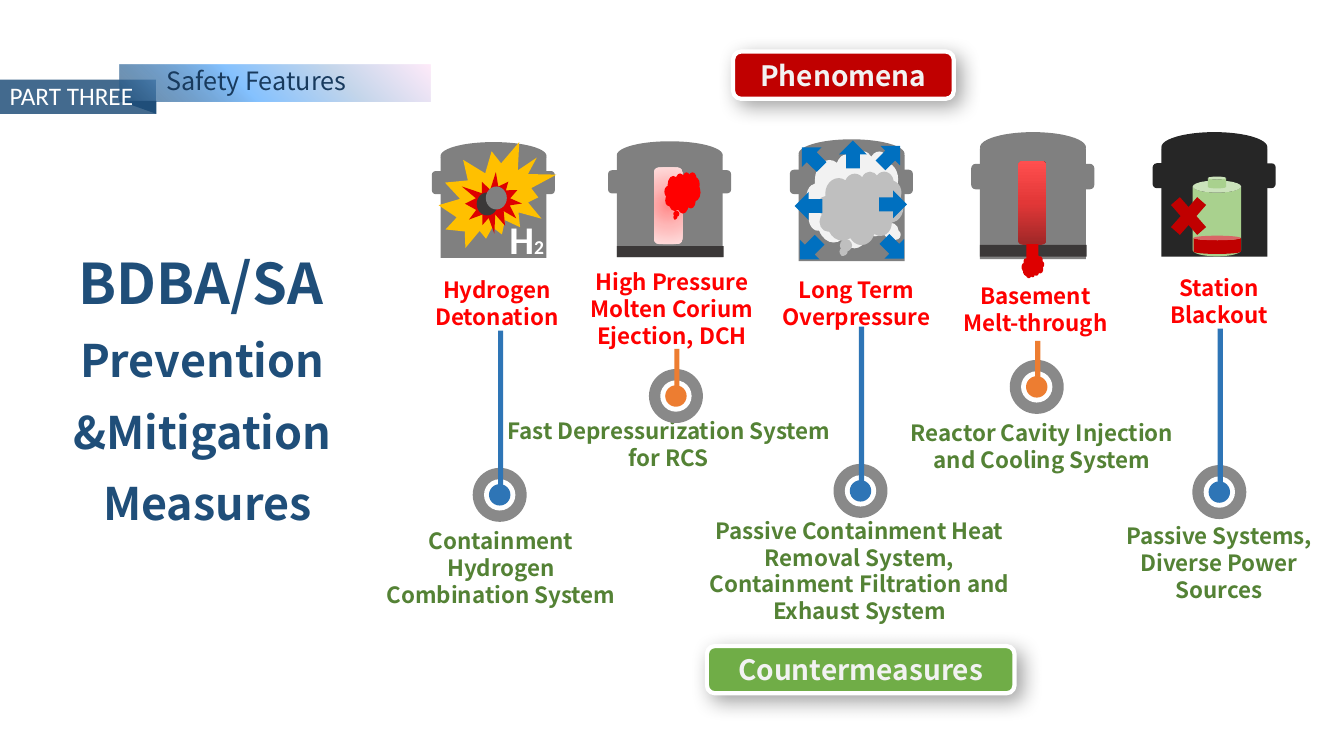
from dataclasses import dataclass

from lxml import etree
from pptx import Presentation
from pptx.dml.color import RGBColor
from pptx.enum.shapes import MSO_SHAPE
from pptx.enum.text import MSO_ANCHOR, MSO_AUTO_SIZE, PP_ALIGN
from pptx.oxml.ns import qn
from pptx.util import Cm, Pt

RECTANGLE = MSO_SHAPE.RECTANGLE
ROUNDED = MSO_SHAPE.ROUNDED_RECTANGLE
OVAL = MSO_SHAPE.OVAL
BURST_SMALL = MSO_SHAPE.EXPLOSION1
BURST_LARGE = MSO_SHAPE.EXPLOSION2
CLOUD = MSO_SHAPE.CLOUD_CALLOUT
ARROW = MSO_SHAPE.RIGHT_ARROW
CAN = MSO_SHAPE.CAN
CROSS = MSO_SHAPE.MATH_MULTIPLY
TOP, MIDDLE = MSO_ANCHOR.TOP, MSO_ANCHOR.MIDDLE
LEFT, CENTER = PP_ALIGN.LEFT, PP_ALIGN.CENTER
GROW, FIXED = MSO_AUTO_SIZE.SHAPE_TO_FIT_TEXT, MSO_AUTO_SIZE.NONE


@dataclass(frozen=True)
class Theme:
    font: str = "Noto Sans CJK SC"
    number_font: str = "Calibri"
    navy: str = "1F4E79"
    heading: str = "183A5D"
    white: str = "FFFFFF"
    off_white: str = "F2F2F2"
    gray: str = "808080"
    ring: str = "898989"
    steam: str = "BFBFBF"
    dark: str = "3B3838"
    black: str = "262626"
    red: str = "FF0000"
    corium: str = "DE0000"
    deep_red: str = "C00000"
    amber: str = "FFC000"
    arrow: str = "0070C0"
    blue: str = "2E75B6"
    orange: str = "ED7D31"
    green: str = "70AD47"
    cell: str = "A9D18E"
    measure: str = "548235"
    title_large: int = 40
    title: int = 32
    chemical: int = 28
    badge: int = 20
    section: int = 18
    label: int = 16
    subscript: int = 14


THEME = Theme()

# Label boxes: text, left, top, width, height
PHENOMENA = [
    ("Hydrogen Detonation", 10.49, 6.83, 4.06, 1.63),
    ("High Pressure Molten Corium Ejection, DCH", 14.53, 6.63, 4.8, 2.31),
    ("Long Term Overpressure", 19.25, 6.83, 4.65, 1.63),
    ("Basement Melt-through", 23.9, 6.99, 4.37, 1.63),
    ("Station Blackout", 29.01, 6.78, 3.4, 1.63),
]
COUNTERMEASURES = [
    ("Containment Hydrogen Combination System", 9.35, 13.16, 6.55, 2.31),
    ("Fast Depressurization System for RCS", 12.5, 10.39, 8.71, 1.63),
    ("Passive Containment Heat Removal System, Containment Filtration and Exhaust System",
     17.25, 12.9, 8.81, 3),
    ("Reactor Cavity Injection and Cooling System", 22.28, 10.44, 7.95, 1.63),
    ("Passive Systems, Diverse Power Sources", 27.58, 13.03, 6.27, 2.31),
]
# Pins: centre x, centre y, top of the stem, colour
PINS = [
    (12.59, 12.47, 8.33, THEME.blue),
    (30.72, 12.4, 8.28, THEME.blue),
    (17.03, 9.98, 8.79, THEME.orange),
    (26.12, 9.75, 8.59, THEME.orange),
    (21.68, 12.37, 8.23, THEME.blue),
]
# Pressure arrows: centre x, centre y, rotation
PRESSURE_ARROWS = [
    (21.49, 3.89, 270), (22.5, 5.15, 0), (22.53, 6.27, 45), (20.37, 5.19, 180),
    (20.4, 6.29, 135), (22.43, 3.92, 315), (20.45, 3.96, 225),
]


def paint(shape, colour):
    shape.shadow.inherit = False
    shape.fill.solid()
    shape.fill.fore_color.rgb = RGBColor.from_string(colour)
    shape.line.fill.background()


def add_figure(shapes, kind, left, top, width, height, colour, rotation=0):
    shape = shapes.add_shape(kind, Cm(left), Cm(top), Cm(width), Cm(height))
    paint(shape, colour)
    shape.rotation = rotation
    return shape


def add_colour(parent, colour, opacity=100):
    element = etree.SubElement(parent, qn("a:srgbClr"), val=colour)
    if opacity < 100:
        etree.SubElement(element, qn("a:alpha"), val=str(opacity * 1000))


def set_gradient(shape, stops, centre=None, angle=0):
    """Stops are (percent, colour, opacity); centre is l, t, r, b in percent."""
    shape.fill.gradient()
    gradient = shape._element.spPr.find(qn("a:gradFill"))
    for child in list(gradient):
        gradient.remove(child)
    stop_list = etree.SubElement(gradient, qn("a:gsLst"))
    for percent, colour, opacity in stops:
        stop = etree.SubElement(stop_list, qn("a:gs"), pos=str(percent * 1000))
        add_colour(stop, colour, opacity)
    if centre:
        route = etree.SubElement(gradient, qn("a:path"), {"path": "circle"})
        sides = {side: str(value * 1000) for side, value in zip("ltrb", centre)}
        etree.SubElement(route, qn("a:fillToRect"), sides)
    else:
        etree.SubElement(gradient, qn("a:lin"), ang=str(angle * 60000), scaled="0")


def add_run(paragraph, text, size, colour, bold=True, font=THEME.font):
    run = paragraph.add_run()
    run.text = text
    run.font.name = font
    run.font.size = Pt(size)
    run.font.bold = bold
    run.font.color.rgb = RGBColor.from_string(colour)


def add_text(shapes, box, runs, align=CENTER, wrap=True):
    frame = shapes.add_textbox(*map(Cm, box)).text_frame
    frame.word_wrap = wrap
    frame.auto_size = GROW
    paragraph = frame.paragraphs[0]
    paragraph.alignment = align
    for run in runs:
        add_run(paragraph, *run)


def add_badge(shapes, text, left, top, width, colour):
    badge = add_figure(shapes, ROUNDED, left, top, width, 1.19, colour)
    badge.line.color.rgb = RGBColor.from_string(THEME.white)
    badge.line.width = Pt(3)
    effects = badge._element.spPr.find(qn("a:effectLst"))
    shadow = etree.SubElement(effects, qn("a:outerShdw"), blurRad=str(Pt(15)),
                              dist=str(Pt(6.2)), dir="2700000", algn="tl", rotWithShape="0")
    add_colour(shadow, "000000", 36)
    badge.text_frame.vertical_anchor = MIDDLE
    paragraph = badge.text_frame.paragraphs[0]
    paragraph.alignment = CENTER
    add_run(paragraph, text, THEME.badge, THEME.off_white)


def add_containment(slide, left, top, height, colour=THEME.gray):
    shapes = slide.shapes.add_group_shape().shapes
    add_figure(shapes, RECTANGLE, left, top + 0.13 * height, 2.67, 0.87 * height, colour)
    add_figure(shapes, OVAL, left, top, 2.67, 0.24 * height, colour)
    add_figure(shapes, ROUNDED, left - 0.22, top + 0.25 * height, 3.1, 0.2 * height, colour)
    return shapes


def add_pin(slide, x, y, stem_top, colour):
    shapes = slide.shapes.add_group_shape().shapes
    for size, fill in ((1.36, THEME.ring), (0.79, THEME.white), (0.54, colour)):
        add_figure(shapes, OVAL, x - size / 2, y - size / 2, size, size, fill)
    add_figure(shapes, RECTANGLE, x - 0.04, stem_top, 0.13, y - stem_top, colour)


def add_title(slide):
    title = slide.shapes.title
    title.left, title.top, title.width, title.height = map(Cm, (1.02, 5.79, 8.41, 7.85))
    frame = title.text_frame
    frame.word_wrap, frame.auto_size, frame.vertical_anchor = True, FIXED, TOP
    for index, text in enumerate(("BDBA/SA ", "Prevention ", "&Mitigation ", "Measures")):
        paragraph = frame.add_paragraph() if index else frame.paragraphs[0]
        paragraph.alignment = CENTER
        paragraph.line_spacing = 1.2
        paragraph.space_before = Pt(5 if index else 0)
        add_run(paragraph, text, THEME.title if index else THEME.title_large, THEME.navy)


def add_section_ribbon(slide):
    shapes = slide.shapes
    band = add_figure(shapes, RECTANGLE, -0.03, 2.01, 3.96, 0.86, THEME.navy)
    colour = band._element.spPr.find(qn("a:solidFill"))[0]
    etree.SubElement(colour, qn("a:alpha"), val="84000")
    ribbon = add_figure(shapes, RECTANGLE, 3.02, 1.63, 7.82, 0.94, THEME.navy)
    set_gradient(ribbon, [(0, THEME.navy, 63), (40, "85C2FF", 100), (70, "C4D6EB", 100),
                          (100, "FFEBFA", 100)], centre=(0, 100, 100, 0))
    fold = shapes.build_freeform(Cm(3.94), Cm(2.54))
    fold.add_line_segments([(Cm(3.02), Cm(2.54)), (Cm(3.94), Cm(2.87))], close=True)
    paint(fold.convert_to_shape(), THEME.navy)
    add_text(shapes, (3.94, 1.52, 10.13, 1.02),
             [("Safety Features", THEME.section, THEME.heading, False)], LEFT)
    add_text(shapes, (-0.03, 1.9, 3.66, 1.02),
             [("PART THREE", THEME.section, THEME.white, False, THEME.number_font)], wrap=False)


def add_icons(slide):
    # Hydrogen detonation
    shapes = add_containment(slide, 11.1, 3.58, 2.92)
    add_figure(shapes, BURST_LARGE, 11.05, 3.58, 2.97, 2.67, THEME.amber)
    add_figure(shapes, BURST_SMALL, 11.73, 4.37, 1.4, 1.5, THEME.corium, 346.8)
    add_figure(shapes, OVAL, 12.01, 4.85, 0.53, 0.58, THEME.dark)
    add_figure(shapes, OVAL, 12.24, 4.7, 0.53, 0.58, THEME.gray)
    add_text(shapes, (12.57, 5.31, 1.4, 1.45),
             [("H", THEME.chemical, THEME.white, True, THEME.number_font),
              ("2", THEME.subscript, THEME.white, True, THEME.number_font)], wrap=False)
    # High pressure ejection
    shapes = add_containment(slide, 15.54, 3.56, 2.92)
    vessel = add_figure(shapes, ROUNDED, 16.48, 4.22, 0.71, 1.93, THEME.red)
    set_gradient(vessel, [(0, "FF8A8A", 100), (50, "FEB8B8", 100), (100, "FEDDDD", 100)],
                 centre=(50, 50, 50, 50))
    add_figure(shapes, CLOUD, 16.74, 4.34, 0.91, 1.04, THEME.red)
    add_figure(shapes, RECTANGLE, 15.54, 6.2, 2.69, 0.28, THEME.dark)
    # Basement melt-through
    shapes = add_containment(slide, 24.69, 3.33, 3.2)
    add_figure(shapes, RECTANGLE, 24.69, 6.17, 2.69, 0.3, THEME.dark)
    vessel = add_figure(shapes, ROUNDED, 25.65, 4.06, 0.71, 2.11, THEME.red)
    set_gradient(vessel, [(0, "9F2727", 100), (50, "E23737", 100), (100, "FF4F4F", 100)], angle=270)
    add_figure(shapes, CLOUD, 25.73, 6.4, 0.58, 0.58, THEME.corium, 166.7)
    add_figure(shapes, RECTANGLE, 25.86, 6.15, 0.3, 0.43, THEME.corium)
    # Long term overpressure
    shapes = add_containment(slide, 20.12, 3.51, 3.07)
    cloud = add_figure(shapes, CLOUD, 20.32, 3.81, 2.36, 2.44, THEME.off_white)
    cloud.adjustments[0], cloud.adjustments[1] = 0.46, 0.37
    add_figure(shapes, CLOUD, 20.6, 4.32, 2.16, 1.85, THEME.steam)
    for x, y, rotation in PRESSURE_ARROWS:
        add_figure(shapes, ARROW, x - 0.35, y - 0.35, 0.7, 0.7, THEME.arrow, rotation)
    # Station blackout
    shapes = add_containment(slide, 29.26, 3.33, 3.14, THEME.black)
    add_figure(shapes, CAN, 30.05, 4.55, 1.22, 1.91, THEME.cell)
    add_figure(shapes, CAN, 30.07, 5.94, 1.19, 0.46, THEME.deep_red)
    add_figure(shapes, CAN, 30.43, 4.45, 0.46, 0.3, THEME.cell)
    add_figure(shapes, CROSS, 29.31, 4.72, 1.27, 1.45, THEME.deep_red)


def main():
    presentation = Presentation()
    presentation.slide_width, presentation.slide_height = Cm(33.86), Cm(19.05)
    slide = presentation.slides.add_slide(presentation.slide_layouts[5])
    add_title(slide)
    add_icons(slide)
    add_badge(slide.shapes, "Phenomena", 18.47, 1.3, 5.56, THEME.deep_red)
    add_badge(slide.shapes, "Countermeasures", 17.81, 16.28, 7.75, THEME.green)
    for labels, colour in ((PHENOMENA, THEME.red), (COUNTERMEASURES, THEME.measure)):
        for text, *box in labels:
            add_text(slide.shapes, box, [(text, THEME.label, colour)])
    for pin in PINS:
        add_pin(slide, *pin)
    add_section_ribbon(slide)
    presentation.save("out.pptx")


if __name__ == "__main__":
    main()
